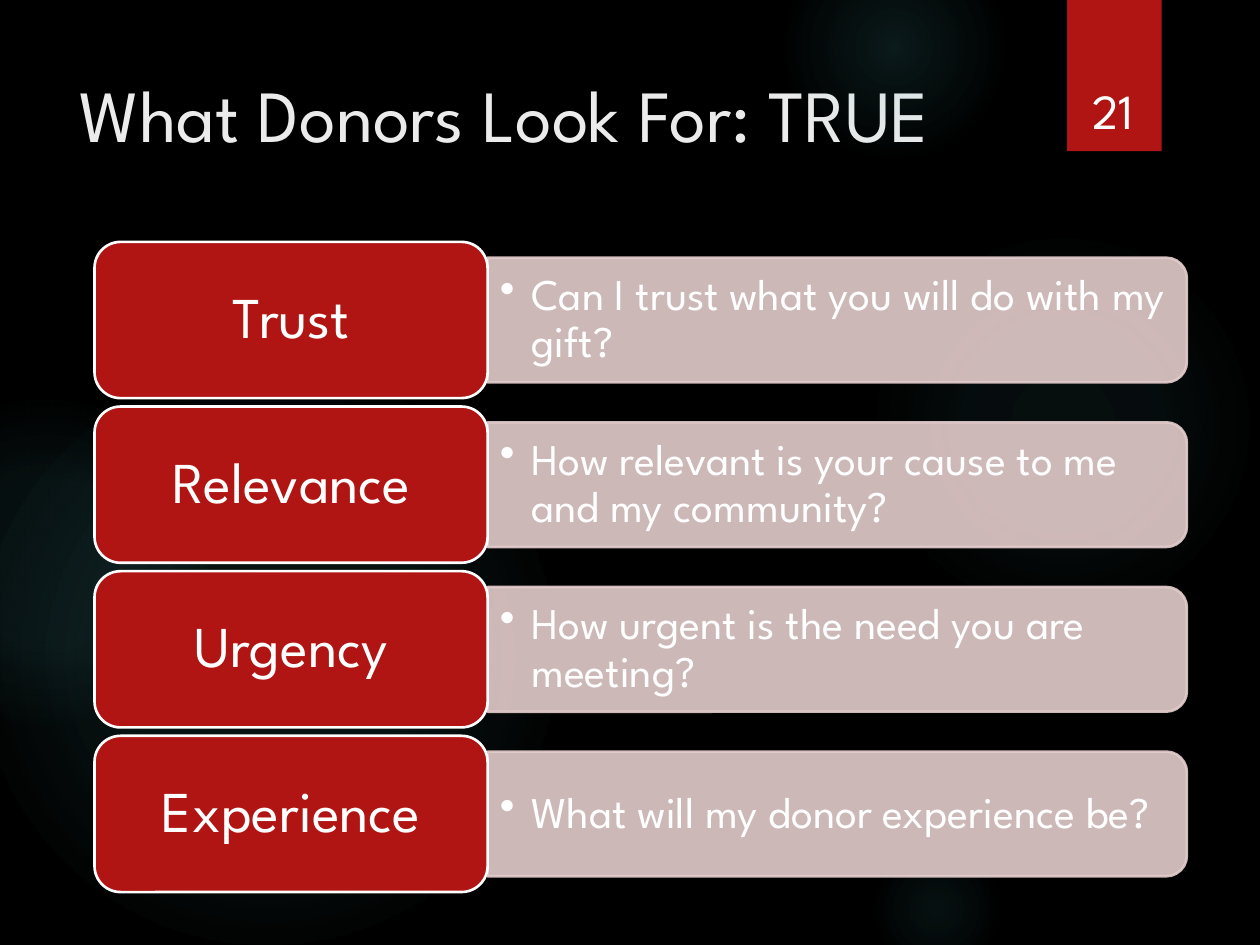
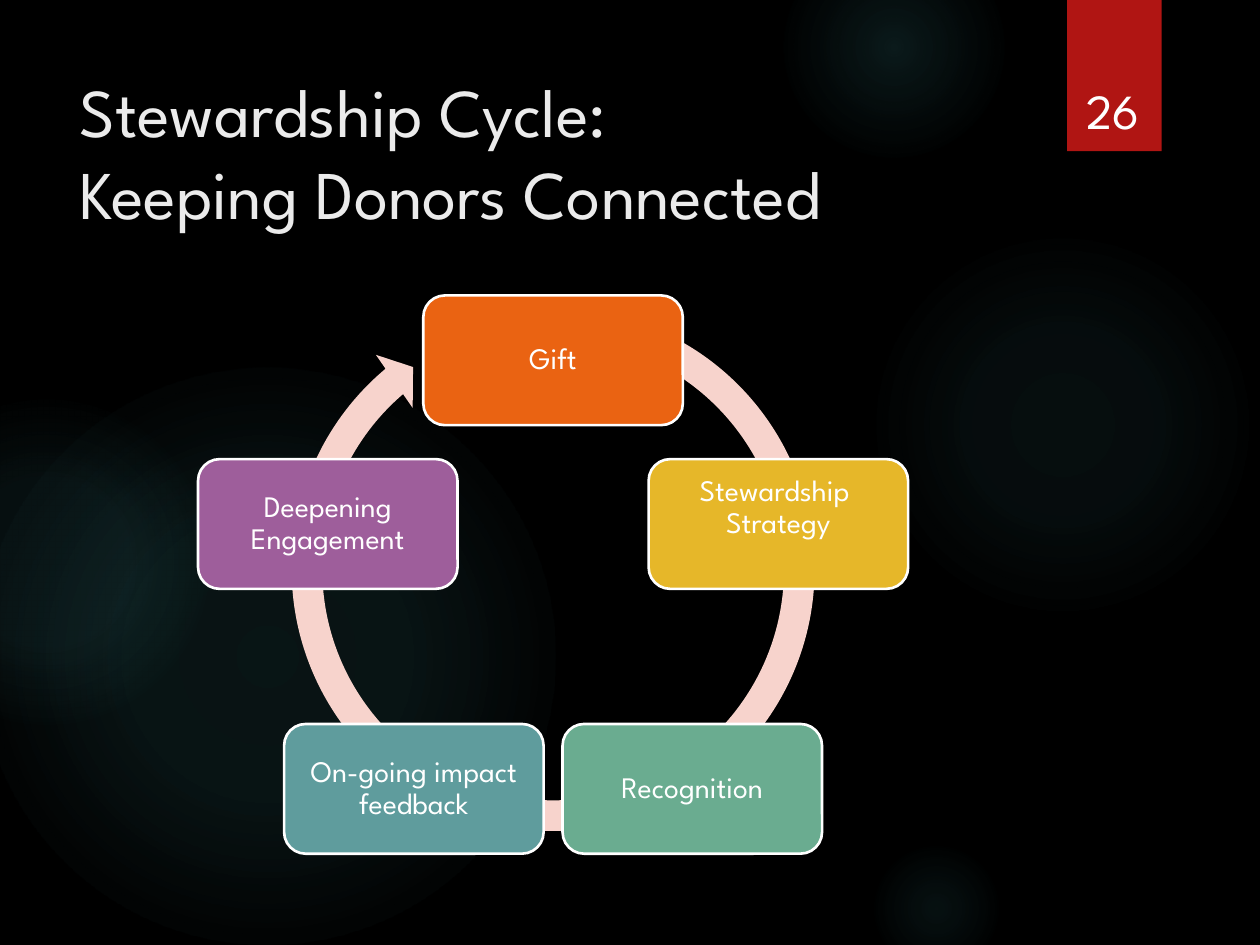
import math
from pptx import Presentation
from pptx.dml.color import RGBColor
from pptx.enum import shapes, text
from pptx.oxml import ns, parse_xml
from pptx.util import Inches, Pt

FONT = "League Spartan"
RED, WHITE, TITLE_COLOR = "B01513", "FFFFFF", "EBEBEB"
GLOW, BAR, RING = "50B9C1", "E4CCCC", "F7D3CC"
SHAPE = shapes.MSO_SHAPE

# Background glows: left, top, diameter, (position %, opacity %) stops
GLOWS = [
    (6.89, 1.83, 3.08, [(0, 7), (36, 6), (69, 0)]),
    (6.22, -0.5, 1.75, [(0, 14), (36, 7), (73, 0)]),
    (6.89, 6.67, 1.08, [(0, 9), (36, 5), (66, 0)]),
    (-0.17, 2.92, 4.58, [(0, 11), (36, 10), (75, 0)]),
    (-0.92, 3.17, 2.58, [(0, 8), (36, 8), (72, 0)]),
]


def add_shape(slide, kind, left, top, width, height, fill=None, line=None):
    """Add a shadowless shape with hex fill and outline colours."""
    shape = slide.shapes.add_shape(
        kind, Inches(left), Inches(top), Inches(width), Inches(height))
    shape.shadow.inherit = False
    if fill:
        shape.fill.solid()
        shape.fill.fore_color.rgb = RGBColor.from_string(fill)
    if line:
        shape.line.color.rgb = RGBColor.from_string(line)
        shape.line.width = Pt(1.5)
    else:
        shape.line.fill.background()
    return shape


def write(shape, words, size, color=WHITE, align=text.PP_ALIGN.CENTER,
          anchor=text.MSO_ANCHOR.MIDDLE, spacing=0.9, margins=(0.07, 0.07, 0.07, 0.07)):
    """Fill a text frame; margins run left, top, right, bottom."""
    frame = shape.text_frame
    frame.word_wrap = True
    frame.auto_size = text.MSO_AUTO_SIZE.NONE
    frame.vertical_anchor = anchor
    (frame.margin_left, frame.margin_top,
     frame.margin_right, frame.margin_bottom) = map(Inches, margins)
    frame.text = words
    for paragraph in frame.paragraphs:
        paragraph.alignment = align
        paragraph.line_spacing = spacing
        paragraph.font.name = FONT
        paragraph.font.size = Pt(size)
        paragraph.font.color.rgb = RGBColor.from_string(color)


presentation = Presentation()
presentation.slide_width, presentation.slide_height = Inches(10), Inches(7.5)
background = presentation.slide_master.background.fill
background.solid()
background.fore_color.rgb = RGBColor.from_string("000000")

# Shared frame: glows, number band and title
slides = []
for title_words, title_size, title_width, number in [
    ("What Donors Look For: TRUE", 42, 8.05, "21"),
    ("Stewardship Cycle: \vKeeping Donors Connected", 39, 7.71, "26"),
]:
    slide = presentation.slides.add_slide(presentation.slide_layouts[5])
    slides.append(slide)

    for left, top, diameter, stops in GLOWS:
        glow = add_shape(slide, SHAPE.OVAL, left, top, diameter, diameter)
        stop_xml = "".join(
            f'<a:gs pos="{position * 1000}"><a:srgbClr val="{GLOW}">'
            f'<a:alpha val="{opacity * 1000}"/></a:srgbClr></a:gs>'
            for position, opacity in stops)
        gradient = parse_xml(
            f'<a:gradFill {ns.nsdecls("a")}><a:gsLst>{stop_xml}</a:gsLst>'
            '<a:path path="circle"><a:fillToRect l="50000" t="50000" r="50000" b="50000"/>'
            '</a:path></a:gradFill>')
        glow._element.spPr.insert(2, gradient)

    band = add_shape(slide, SHAPE.RECTANGLE, 8.47, 0, 0.75, 1.2, RED)
    write(band, number, 28, anchor=text.MSO_ANCHOR.BOTTOM, spacing=1.0,
          margins=(0.1, 0.05, 0.12, 0.09))

    title = slide.shapes.title
    title.left, title.top = Inches(0.53), Inches(0.5)
    title.width, title.height = Inches(title_width), Inches(1.53)
    write(title, title_words, title_size, TITLE_COLOR, text.PP_ALIGN.LEFT,
          text.MSO_ANCHOR.TOP, 1.0, (0.1, 0.05, 0.1, 0.05))

donors_slide, cycle_slide = slides

# Donor questions: a red label over the left end of each bar
ROW_STEP = 3.92 / 3
BAR_LEFT, BAR_WIDTH, BAR_HEIGHT = 3.87, 5.55, 0.99
for row, (label_words, question) in enumerate([
    ("Trust", "Can I trust what you will do with my gift?"),
    ("Relevance", "How relevant is your cause to me and my community?"),
    ("Urgency", "How urgent is the need you are meeting?"),
    ("Experience", "What will my donor experience be?"),
]):
    label_top = 1.92 + row * ROW_STEP
    middle = label_top + 0.62

    # The bar stands upright before its quarter turn
    bar = add_shape(donors_slide, SHAPE.ROUND_2_SAME_RECTANGLE,
                    BAR_LEFT + (BAR_WIDTH - BAR_HEIGHT) / 2, middle - BAR_WIDTH / 2,
                    BAR_HEIGHT, BAR_WIDTH, BAR, BAR)
    bar.rotation = 90
    for color in bar._element.spPr.iter(ns.qn("a:srgbClr")):
        color.append(parse_xml(f'<a:alpha {ns.nsdecls("a")} val="90000"/>'))

    question_box = donors_slide.shapes.add_textbox(
        Inches(BAR_LEFT), Inches(middle - 0.45), Inches(5.5), Inches(0.9))
    write(question_box, question, 25, align=text.PP_ALIGN.LEFT,
          margins=(0.1, 0.05, 0.1, 0.05))
    properties = question_box.text_frame.paragraphs[0]._p.get_or_add_pPr()
    properties.set("marL", str(Inches(0.25)))
    properties.set("indent", str(-Inches(0.25)))
    bullet = parse_xml(f'<a:buChar {ns.nsdecls("a")} char="•"/>')
    properties.insert_element_before(bullet, "a:tabLst", "a:defRPr", "a:extLst")

    label = add_shape(donors_slide, SHAPE.ROUNDED_RECTANGLE,
                      0.75, label_top, 3.12, 1.24, RED, WHITE)
    write(label, label_words, 33, margins=(0.14, 0.07, 0.14, 0.07))

# Stewardship cycle: ring arrow behind five evenly spaced steps
ring = add_shape(cycle_slide, SHAPE.CIRCULAR_ARROW, 2.18, 2.31, 4.42, 4.42, RING)
for index, value in enumerate([0.055, 3.307, 137.892, 173.779, 0.058]):
    ring.adjustments[index] = value

CENTER_X, CENTER_Y, RADIUS = 4.39, 4.74, 1.88
STEP_WIDTH, STEP_HEIGHT = 2.06, 1.03
steps = [
    ("Gift", "EA6312", 0.07),
    ("Stewardship \nStrategy", "E6B729", 0.32),
    ("Recognition", "6AAC90", 0.07),
    ("On-going impact feedback", "5F9C9D", 0.07),
    ("Deepening Engagement", "9E5E9B", 0.07),
]
for index, (words, fill, bottom_margin) in enumerate(steps):
    angle = 2 * math.pi * index / len(steps)
    step = add_shape(cycle_slide, SHAPE.ROUNDED_RECTANGLE,
                     CENTER_X + RADIUS * math.sin(angle) - STEP_WIDTH / 2,
                     CENTER_Y - RADIUS * math.cos(angle) - STEP_HEIGHT / 2,
                     STEP_WIDTH, STEP_HEIGHT, fill, WHITE)
    write(step, words, 17, margins=(0.07, 0.07, 0.07, bottom_margin))

presentation.save("out.pptx")
